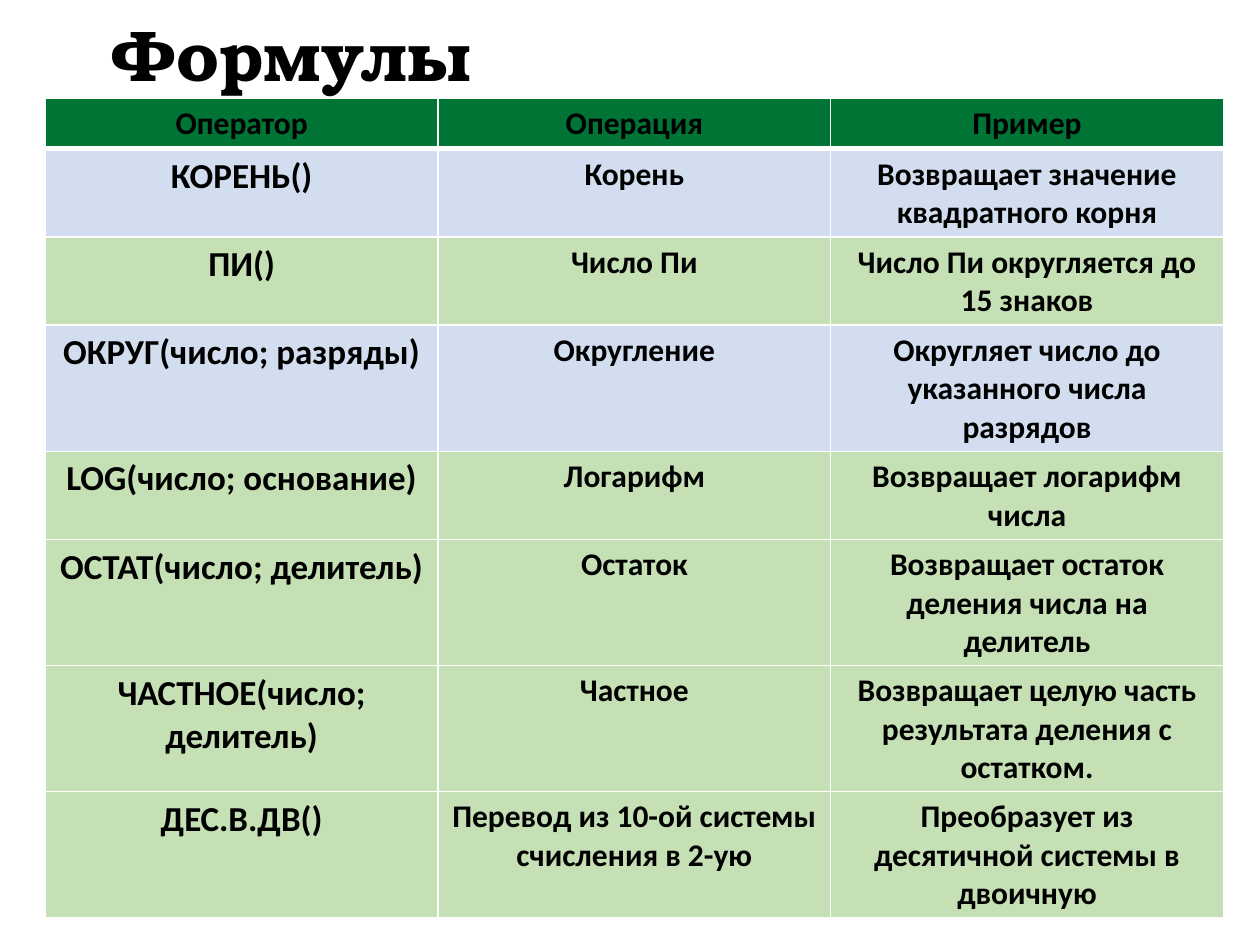
from dataclasses import dataclass
from typing import NamedTuple

from lxml import etree
from pptx import Presentation
from pptx.dml.color import RGBColor
from pptx.enum.text import MSO_ANCHOR, PP_ALIGN
from pptx.oxml.ns import qn
from pptx.util import Inches, Pt

CENTER, LEFT = PP_ALIGN.CENTER, PP_ALIGN.LEFT
MIDDLE = MSO_ANCHOR.MIDDLE


@dataclass(frozen=True)
class Theme:
    text: str = "000000"
    border: str = "FFFFFF"
    header: str = "007434"
    blue: str = "D2DEEF"
    green: str = "C5E0B4"
    title_font: str = "TeX Gyre Bonum"
    body_font: str = "Calibri"
    title_size: float = 39.6
    operator_size: float = 20
    body_size: float = 18
    line: float = 1
    header_line: float = 3


THEME = Theme()


class FormulaRow(NamedTuple):
    operator: str
    operation: str
    example: str
    height: float
    fill: str = THEME.green


HEADER = FormulaRow("Оператор", "Операция", "Пример", 0.38, THEME.header)
FORMULAS = [
    FormulaRow("КОРЕНЬ()", "Корень", "Возвращает значение квадратного корня", 0.48, THEME.blue),
    FormulaRow("ПИ()", "Число Пи", "Число Пи округляется до 15 знаков", 0.47),
    FormulaRow("ОКРУГ(число; разряды)", "Округление",
               "Округляет число до указанного числа разрядов", 0.49, THEME.blue),
    FormulaRow("LOG(число; основание)", "Логарифм", "Возвращает логарифм числа", 0.35),
    FormulaRow("ОСТАТ(число; делитель)", "Остаток",
               "Возвращает остаток деления числа на делитель", 0.56),
    FormulaRow("ЧАСТНОЕ(число; делитель)", "Частное",
               "Возвращает целую часть результата деления с остатком.", 0.56),
    FormulaRow("ДЕС.В.ДВ()", "Перевод из 10-ой системы счисления в 2-ую",
               "Преобразует из десятичной системы в двоичную", 0.56),
]


def write(tf, text: str, font: str, size: float, align) -> None:
    p = tf.paragraphs[0]
    p.alignment = align
    r = p.add_run()
    r.text = text
    for name, value in {"name": font, "size": Pt(size), "bold": True}.items():
        setattr(r.font, name, value)
    r.font.color.rgb = RGBColor.from_string(THEME.text)


def add_borders(cell, top: float, bottom: float) -> None:
    """Add the cell's border lines; call before filling, as the schema order requires."""
    tc_pr = cell._tc.get_or_add_tcPr()
    widths = {"a:lnL": THEME.line, "a:lnR": THEME.line, "a:lnT": top, "a:lnB": bottom}
    for tag, width in widths.items():
        ln = etree.SubElement(tc_pr, qn(tag), w=str(Pt(width)))
        fill = etree.SubElement(ln, qn("a:solidFill"))
        etree.SubElement(fill, qn("a:srgbClr"), val=THEME.border)


def add_title(s, text: str) -> None:
    tf = s.shapes.add_textbox(Inches(0.78), Inches(0.22), Inches(8.43), Inches(0.49)).text_frame
    tf.word_wrap = True
    tf.vertical_anchor = MIDDLE
    write(tf, text, THEME.title_font, THEME.title_size, LEFT)
    tf.paragraphs[0].line_spacing = 0.9


def add_formula_table(s, rows: list[FormulaRow]) -> None:
    frame = s.shapes.add_table(len(rows), 3, Inches(0.36), Inches(0.78), Inches(9.35), Inches(6.5))
    table = frame.table
    for i, row in enumerate(rows):
        table.rows[i].height = Inches(row.height)
        top = THEME.header_line if i == 1 else THEME.line
        bottom = THEME.header_line if i == 0 else THEME.line
        for j, text in enumerate((row.operator, row.operation, row.example)):
            cell = table.cell(i, j)
            add_borders(cell, top, bottom)
            cell.fill.solid()
            cell.fill.fore_color.rgb = RGBColor.from_string(row.fill)
            size = THEME.operator_size if i and j == 0 else THEME.body_size
            write(cell.text_frame, text, THEME.body_font, size, CENTER)
    frame.height = Inches(6.5)  # rows grow to fit their text


def main() -> None:
    prs = Presentation()
    prs.slide_width, prs.slide_height = Inches(10), Inches(7.5)
    s = prs.slides.add_slide(prs.slide_layouts[6])
    add_title(s, "Формулы")
    add_formula_table(s, [HEADER, *FORMULAS])
    prs.save("out.pptx")


if __name__ == "__main__":
    main()
